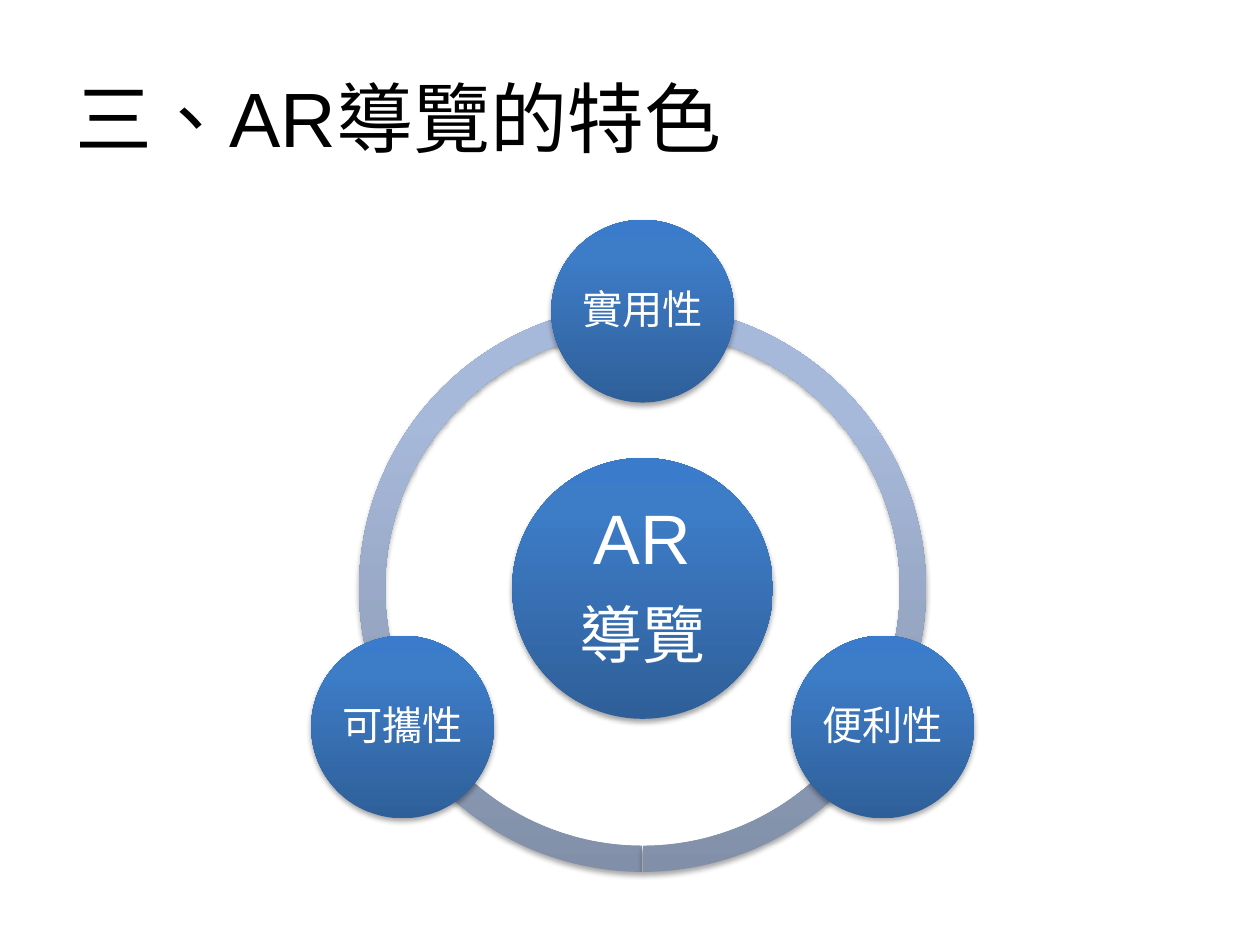
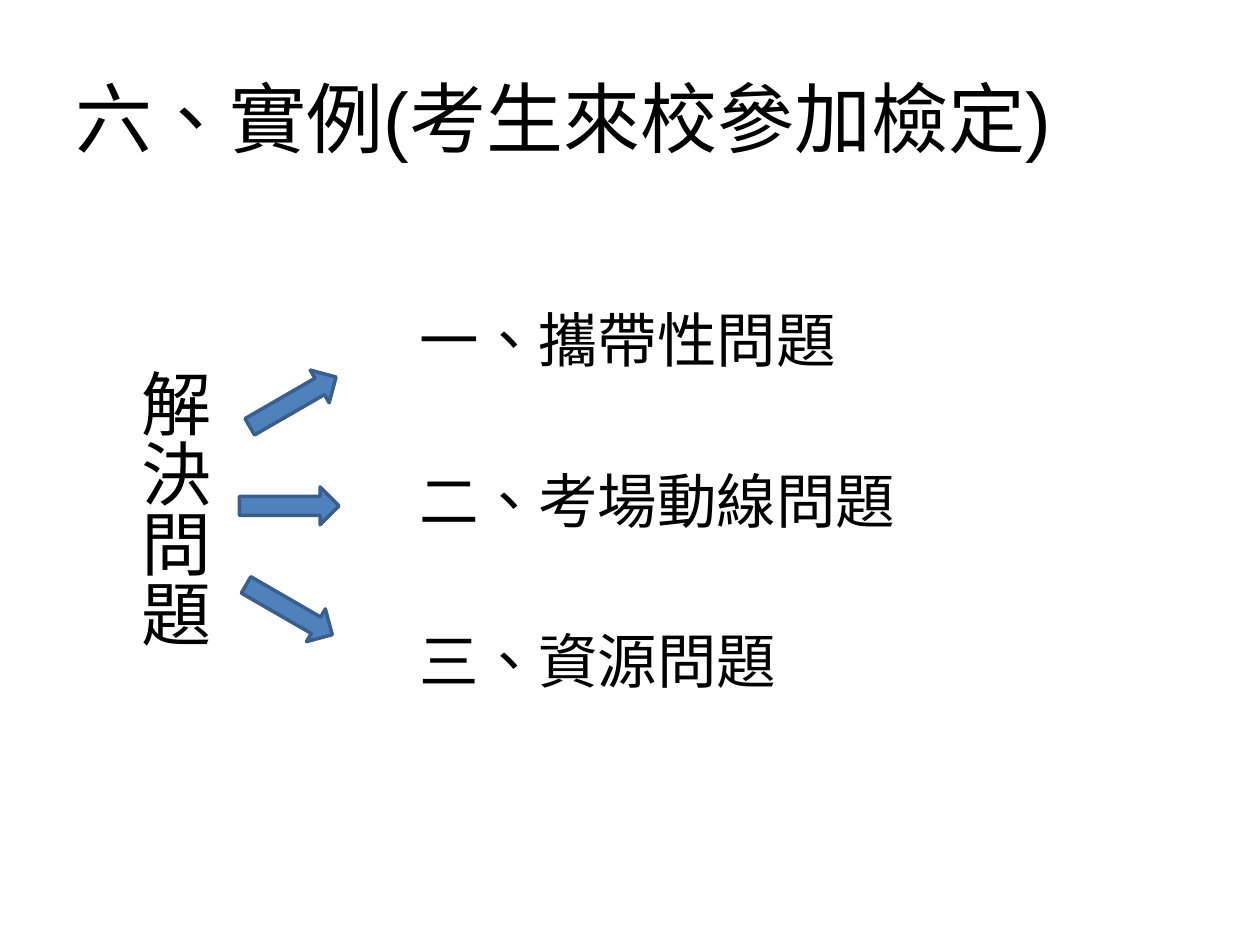
"""Build two slides: the features of AR guiding and the problems it solves."""
import math

from lxml import etree
from pptx import Presentation
from pptx.dml.color import RGBColor
from pptx.enum import lang, shapes, text
from pptx.oxml import ns
from pptx.util import Inches, Pt

FEATURES_TITLE = "三、AR導覽的特色"
HUB_LINES = [("AR", 40), ("導覽", 36)]
FEATURES = ["實用性", "便利性", "可攜性"]

CASE_TITLE = "六、實例(考生來校參加檢定)"
GOAL = "解決問題"
PROBLEMS = ["一、攜帶性問題", "二、考場動線問題", "三、資源問題"]

COLORS = {"ink": "000000", "paper": "FFFFFF", "arrow": "4F81BD", "arrow_edge": "3A5F8C"}
BALL_SHADES = [(0, "2F5F99"), (80, "3D7CC7"), (100, "3A7CCB")]
RING_SHADES = [(0, "818FA8"), (80, "A7B9DA"), (100, "A7BADC")]
HEADING_FONT, BODY_FONT = "Arial", "Calibri"

CENTER_X, CENTER_Y = 5.1, 4.67
RING_SIZE, RING_THICKNESS = 4.5, 0.046
RING_ARCS = [(90, 162), (18, 90), (162, 18)]
HUB_SIZE, FEATURE_SIZE, ORBIT = 2.07, 1.45, 2.2
PROBLEM_TOP, PROBLEM_STEP = 2.2, 1.275
ARROWS = [(1.93, -30), (1.9, 0), (1.9, 30)]
ARROW_TOP, ARROW_STEP = 3.04, 0.825


def rgb(name):
    return RGBColor.from_string(COLORS[name])


def box(left, top, width, height):
    return [Inches(length) for length in (left, top, width, height)]


def centered(x, y, size):
    return box(x - size / 2, y - size / 2, size, size)


def write(shape, lines, font, color, inset=None, align=None, spacing=None):
    frame = shape.text_frame
    frame.word_wrap = True
    frame.vertical_anchor = text.MSO_ANCHOR.MIDDLE
    if inset is not None:
        frame.margin_left = frame.margin_right = Inches(inset)
        frame.margin_top = frame.margin_bottom = Inches(inset)
    for index, (words, size) in enumerate(lines):
        paragraph = frame.add_paragraph() if index else frame.paragraphs[0]
        paragraph.alignment = align
        if spacing:
            paragraph.line_spacing = spacing
            paragraph.space_after = Pt(round(size * 0.35))
        run = paragraph.add_run()
        run.text = words
        run.font.size = Pt(size)
        run.font.name = font
        run.font.color.rgb = rgb(color)
        run.font.language_id = lang.MSO_LANGUAGE_ID.TRADITIONAL_CHINESE
    return frame


def add_title(slide, words):
    title = slide.shapes.add_textbox(*box(0.5, 0.3, 9, 1.25))
    write(title, [(words, 44)], HEADING_FONT, "ink")


def add_shaded(slide, kind, place, shades):
    shape = slide.shapes.add_shape(kind, *place)
    shape.fill.gradient()
    shape.fill.gradient_angle = 90
    shape.line.fill.background()
    shape.shadow.inherit = False
    properties = shape._element.spPr
    stops = properties.find(".//" + ns.qn("a:gsLst"))
    for stop in list(stops):
        stops.remove(stop)
    for position, shade in shades:
        stop = etree.SubElement(stops, ns.qn("a:gs"), pos=str(position * 1000))
        etree.SubElement(stop, ns.qn("a:srgbClr"), val=shade)
    shadow = etree.SubElement(
        properties.find(ns.qn("a:effectLst")), ns.qn("a:outerShdw"),
        blurRad=str(Pt(3.1)), dist=str(Pt(1.8)), dir="5400000", rotWithShape="0")
    tint = etree.SubElement(shadow, ns.qn("a:srgbClr"), val=COLORS["ink"])
    etree.SubElement(tint, ns.qn("a:alpha"), val="35000")
    return shape


def add_ball(slide, x, y, size, lines, font, inset):
    ball = add_shaded(slide, shapes.MSO_SHAPE.OVAL, centered(x, y, size), BALL_SHADES)
    write(ball, lines, font, "paper", inset, text.PP_ALIGN.CENTER, 0.9)


def build_features(slide):
    add_title(slide, FEATURES_TITLE)
    for start, end in RING_ARCS:
        arc = add_shaded(slide, shapes.MSO_SHAPE.BLOCK_ARC,
                         centered(CENTER_X, CENTER_Y, RING_SIZE), RING_SHADES)
        for index, value in enumerate((start * 0.6, end * 0.6, RING_THICKNESS)):
            arc.adjustments[index] = value
    add_ball(slide, CENTER_X, CENTER_Y, HUB_SIZE, HUB_LINES, HEADING_FONT, 0.06)
    for index, feature in enumerate(FEATURES):
        angle = math.tau * index / len(FEATURES)
        add_ball(slide, CENTER_X + ORBIT * math.sin(angle), CENTER_Y - ORBIT * math.cos(angle),
                 FEATURE_SIZE, [(feature, 23)], BODY_FONT, 0.03)


def build_case(slide):
    add_title(slide, CASE_TITLE)
    for index, problem in enumerate(PROBLEMS):
        row = slide.shapes.add_textbox(
            *box(3.19, PROBLEM_TOP + index * PROBLEM_STEP, 6.75, 1.05))
        write(row, [(problem, 34)], BODY_FONT, "ink", 0.14, spacing=0.9)

    goal = slide.shapes.add_textbox(*box(0.28, 2.83, 1.48, 2.34))
    frame = write(goal, [(GOAL, 40)], HEADING_FONT, "ink")
    frame.vertical_anchor = text.MSO_ANCHOR.TOP
    frame.word_wrap = False
    frame.auto_size = text.MSO_AUTO_SIZE.SHAPE_TO_FIT_TEXT
    frame._txBody.bodyPr.set("vert", "eaVert")

    for index, (left, tilt) in enumerate(ARROWS):
        arrow = slide.shapes.add_shape(
            shapes.MSO_SHAPE.RIGHT_ARROW, *box(left, ARROW_TOP + index * ARROW_STEP, 0.79, 0.3))
        arrow.rotation = tilt
        arrow.fill.solid()
        arrow.fill.fore_color.rgb = rgb("arrow")
        arrow.line.color.rgb = rgb("arrow_edge")
        arrow.line.width = Pt(2)
        arrow.shadow.inherit = False


def main():
    deck = Presentation()
    deck.slide_width, deck.slide_height = Inches(10), Inches(7.5)
    for build in (build_features, build_case):
        build(deck.slides.add_slide(deck.slide_layouts[6]))
    deck.save("out.pptx")


if __name__ == "__main__":
    main()
